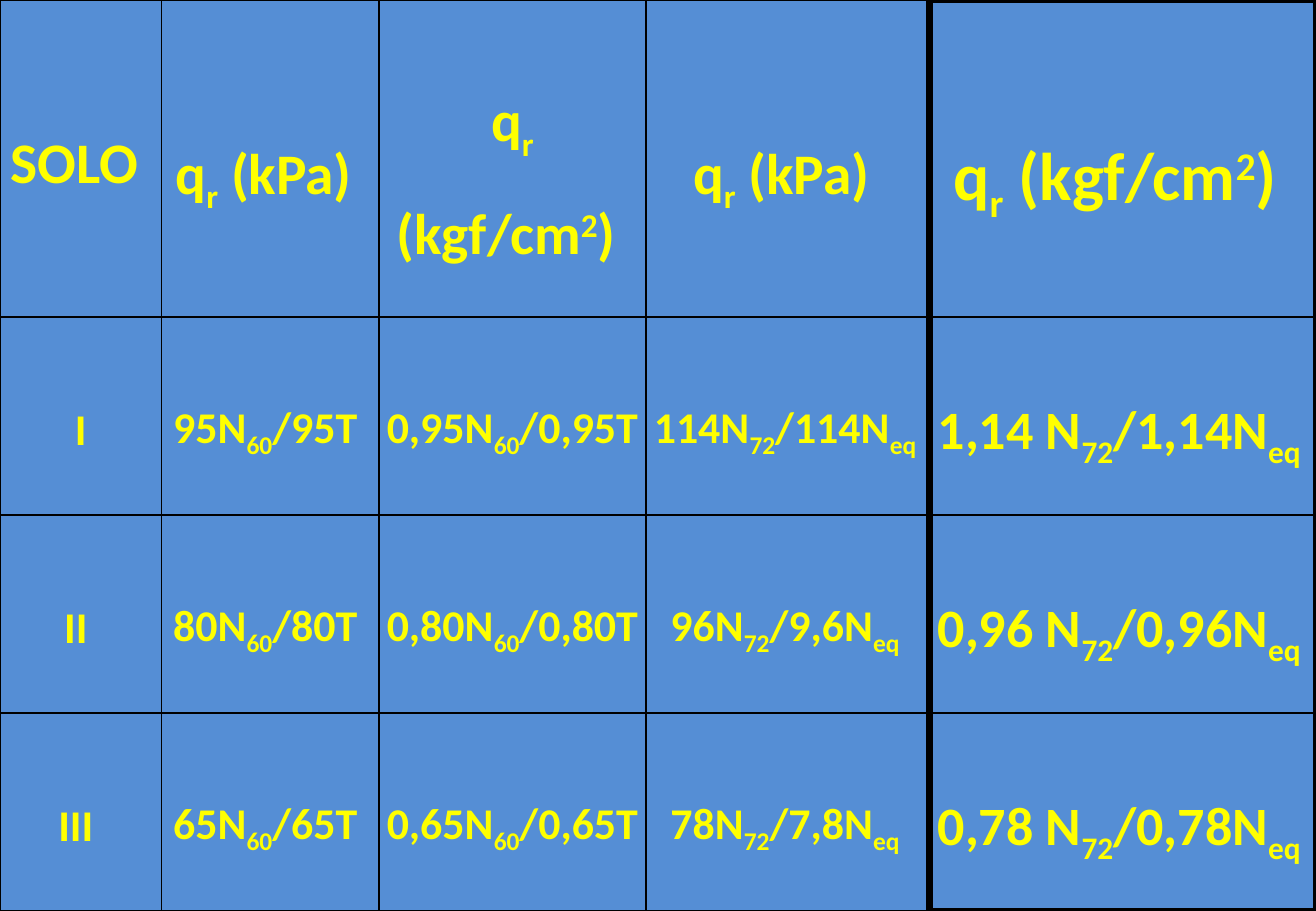
from dataclasses import dataclass

from lxml import etree
from pptx import Presentation
from pptx.dml.color import RGBColor
from pptx.enum.text import MSO_ANCHOR, PP_ALIGN
from pptx.oxml.ns import qn
from pptx.util import Pt

CENTER = PP_ALIGN.CENTER
MIDDLE = MSO_ANCHOR.MIDDLE

ROWS = [
    ["SOLO ", "q|_r| (kPa) ", "q|_r| (kgf/cm|^2|) ", "q|_r| (kPa) ", "q|_r| (kgf/cm|^2|) "],
    ["I", "95N|_60|/95T ", "0,95N|_60|/0,95T ", "114N|_72|/114N|_eq ", "1,14 N|_72|/1,14N|_eq "],
    ["II ", "80N|_60|/80T ", "0,80N|_60|/0,80T ", "96N|_72|/9,6N|_eq ", "0,96 N|_72|/0,96N|_eq "],
    ["III ", "65N|_60|/65T ", "0,65N|_60|/0,65T ", "78N|_72|/7,8N|_eq ", "0,78 N|_72|/0,78N|_eq "],
]
COLUMN_WIDTHS = [95.8, 128.8, 158.4, 168, 229]
HEADER_HEIGHT = 188
BASELINES = {"_": "-25000", "^": "30000"}


@dataclass(frozen=True)
class Theme:
    font: str = "Calibri"
    fill: RGBColor = RGBColor(0x55, 0x8E, 0xD5)
    text: RGBColor = RGBColor(0xFF, 0xFF, 0x00)
    border: str = "000000"
    thin: float = 1
    thick: float = 4.5
    header: int = 34
    header_result: int = 40
    body: int = 26
    body_result: int = 32


THEME = Theme()
WIDTH, HEIGHT = 780, 540
LAST_ROW, LAST_COLUMN = len(ROWS) - 1, len(COLUMN_WIDTHS) - 1


def border_widths(row, column):
    result = column == LAST_COLUMN
    thick = {
        "L": result,
        "R": column >= LAST_COLUMN - 1,
        "T": result and row == 0,
        "B": result and row == LAST_ROW,
    }
    return {side: THEME.thick if heavy else THEME.thin for side, heavy in thick.items()}


def set_borders(cell, widths):
    properties = cell._tc.get_or_add_tcPr()
    for side, width in widths.items():
        line = etree.SubElement(properties, qn(f"a:ln{side}"), w=str(Pt(width)))
        solid = etree.SubElement(line, qn("a:solidFill"))
        etree.SubElement(solid, qn("a:srgbClr"), val=THEME.border)


def text_size(row, column):
    if column == LAST_COLUMN:
        return THEME.body_result if row else THEME.header_result
    return THEME.body if row else THEME.header


def write_text(cell, text, size, spacing):
    para = cell.text_frame.paragraphs[0]
    para.alignment = CENTER
    para.line_spacing = spacing
    para.font.name = THEME.font
    para.font.size = Pt(size)
    para.font.bold = True
    para.font.color.rgb = THEME.text
    for piece in text.split("|"):
        span = para.add_run()
        baseline = BASELINES.get(piece[0])
        span.text = piece[1:] if baseline else piece
        if baseline:
            span._r.get_or_add_rPr().set("baseline", baseline)


def main():
    deck = Presentation()
    deck.slide_width, deck.slide_height = Pt(WIDTH), Pt(HEIGHT)
    page = deck.slides.add_slide(deck.slide_layouts[6])
    page.background.fill.solid()
    page.background.fill.fore_color.rgb = THEME.fill

    table = page.shapes.add_table(
        len(ROWS), len(COLUMN_WIDTHS), 0, 0, Pt(WIDTH), Pt(HEIGHT)
    ).table
    for column, width in zip(table.columns, COLUMN_WIDTHS):
        column.width = Pt(width)
    body_height = (HEIGHT - HEADER_HEIGHT) / LAST_ROW
    for index, row in enumerate(table.rows):
        row.height = Pt(body_height if index else HEADER_HEIGHT)

    for row, texts in enumerate(ROWS):
        for column, text in enumerate(texts):
            cell = table.cell(row, column)
            cell.margin_left = cell.margin_right = Pt(3)
            cell.margin_top, cell.margin_bottom = Pt(0.7), 0
            cell.vertical_anchor = MIDDLE
            set_borders(cell, border_widths(row, column))
            cell.fill.solid()
            cell.fill.fore_color.rgb = THEME.fill
            spacing = 1.15 if row == column == 0 else 1.5
            write_text(cell, text, text_size(row, column), spacing)

    deck.save("out.pptx")


if __name__ == "__main__":
    main()
